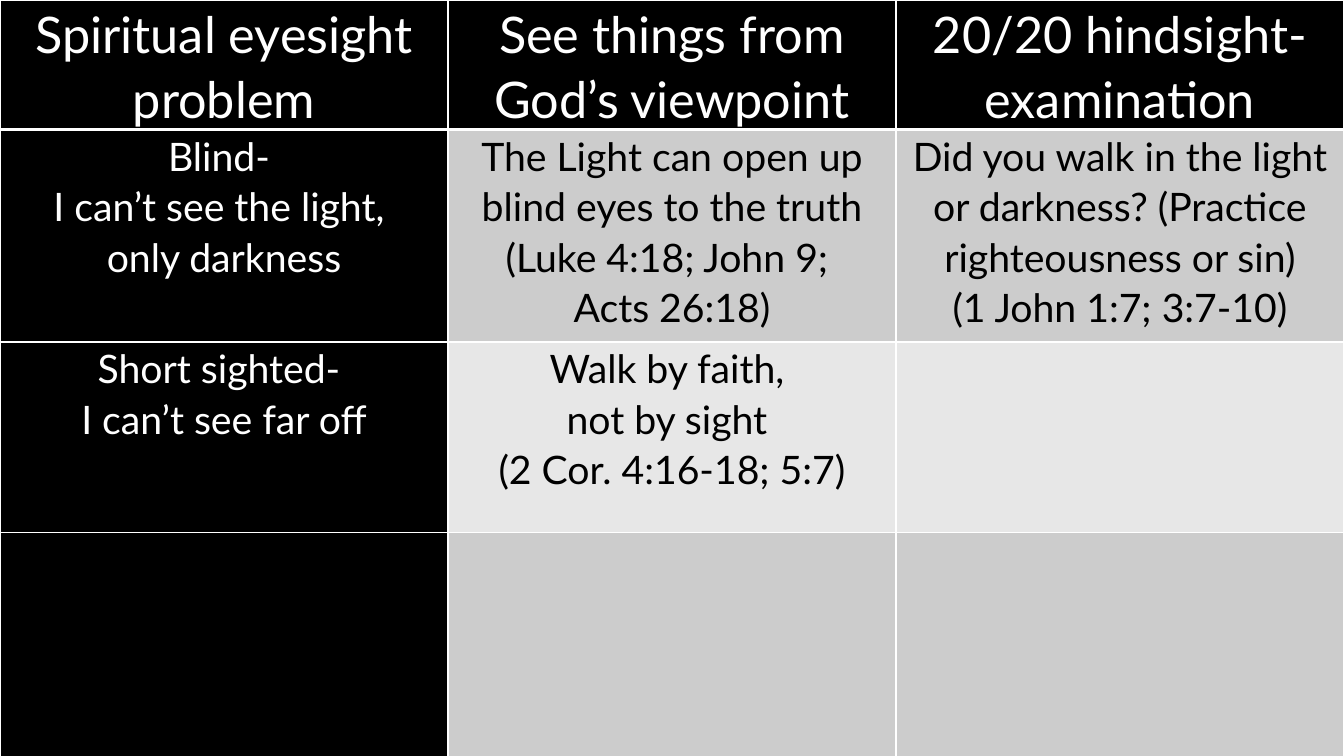
from lxml import etree
from pptx import Presentation
from pptx.dml.color import RGBColor
from pptx.enum.text import PP_ALIGN
from pptx.oxml.ns import qn
from pptx.util import Pt

CENTER = PP_ALIGN.CENTER
BLACK = RGBColor(0x00, 0x00, 0x00)
WHITE = RGBColor(0xFF, 0xFF, 0xFF)
DARK_BAND = RGBColor(0xCC, 0xCC, 0xCC)
LIGHT_BAND = RGBColor(0xE7, 0xE7, 0xE7)
FONT = "Lato"

# Content: each cell is a list of paragraphs
ROWS = [
    [
        ["Spiritual eyesight problem"],
        ["See things from God’s viewpoint"],
        ["20/20 hindsight- examination"],
    ],
    [
        ["Blind- ", "I can’t see the light, ", "only darkness"],
        ["The Light can open up blind eyes to the truth (Luke 4:18; John 9; ",
         "Acts 26:18)"],
        ["Did you walk in the light or darkness? (Practice righteousness or sin)",
         "(1 John 1:7; 3:7-10)"],
    ],
    [
        ["Short sighted- ", "I can’t see far off"],
        ["Walk by faith, ", "not by sight ", "(2 Cor. 4:16-18; 5:7)"],
        [],
    ],
    [[], [], []],
]

# Sizes in points
SLIDE_WIDTH, SLIDE_HEIGHT = 960, 540
ROW_HEIGHTS = [89.3, 151.9, 136.1, 162.7]
SIDE_MARGIN = 5.2
HEADER_SIZE, BODY_SIZE = 36, 28
LINE_SPACING = 1.07
THIN, THICK = 1, 3


def set_borders(cell, top, bottom):
    """Give a cell white lines, thin at the sides."""
    properties = cell._tc.get_or_add_tcPr()
    widths = {"a:lnL": THIN, "a:lnR": THIN, "a:lnT": top, "a:lnB": bottom}
    for tag, width in widths.items():
        line = etree.SubElement(properties, qn(tag), w=str(Pt(width)))
        fill = etree.SubElement(line, qn("a:solidFill"))
        etree.SubElement(fill, qn("a:srgbClr"), val=str(WHITE))


def write_cell(cell, lines, size, color):
    frame = cell.text_frame
    for index, line in enumerate(lines):
        para = frame.add_paragraph() if index else frame.paragraphs[0]
        para.alignment = CENTER
        para.line_spacing = LINE_SPACING
        span = para.add_run()
        span.text = line
        span.font.name = FONT
        span.font.size = Pt(size)
        span.font.color.rgb = color


def main():
    deck = Presentation()
    deck.slide_width, deck.slide_height = Pt(SLIDE_WIDTH), Pt(SLIDE_HEIGHT)
    page = deck.slides.add_slide(deck.slide_layouts[6])
    page.background.fill.solid()
    page.background.fill.fore_color.rgb = BLACK

    # Table covering the whole page
    column_count = len(ROWS[0])
    table = page.shapes.add_table(len(ROWS), column_count, 0, 0,
                                  Pt(SLIDE_WIDTH), Pt(SLIDE_HEIGHT)).table
    table.first_col = True
    for column in table.columns:
        column.width = Pt(SLIDE_WIDTH / column_count)

    # Black header row and first column, banded body
    for r, (row, height) in enumerate(zip(ROWS, ROW_HEIGHTS)):
        table.rows[r].height = Pt(height)
        band = DARK_BAND if r % 2 else LIGHT_BAND
        for c, lines in enumerate(row):
            cell = table.cell(r, c)
            is_label = r == 0 or c == 0
            cell.margin_left = cell.margin_right = Pt(SIDE_MARGIN)
            cell.margin_top = cell.margin_bottom = 0
            set_borders(cell, THICK if r == 1 else THIN, THICK if r == 0 else THIN)
            cell.fill.solid()
            cell.fill.fore_color.rgb = BLACK if is_label else band
            write_cell(cell, lines, BODY_SIZE if r else HEADER_SIZE,
                       WHITE if is_label else BLACK)

    deck.save("out.pptx")


if __name__ == "__main__":
    main()
